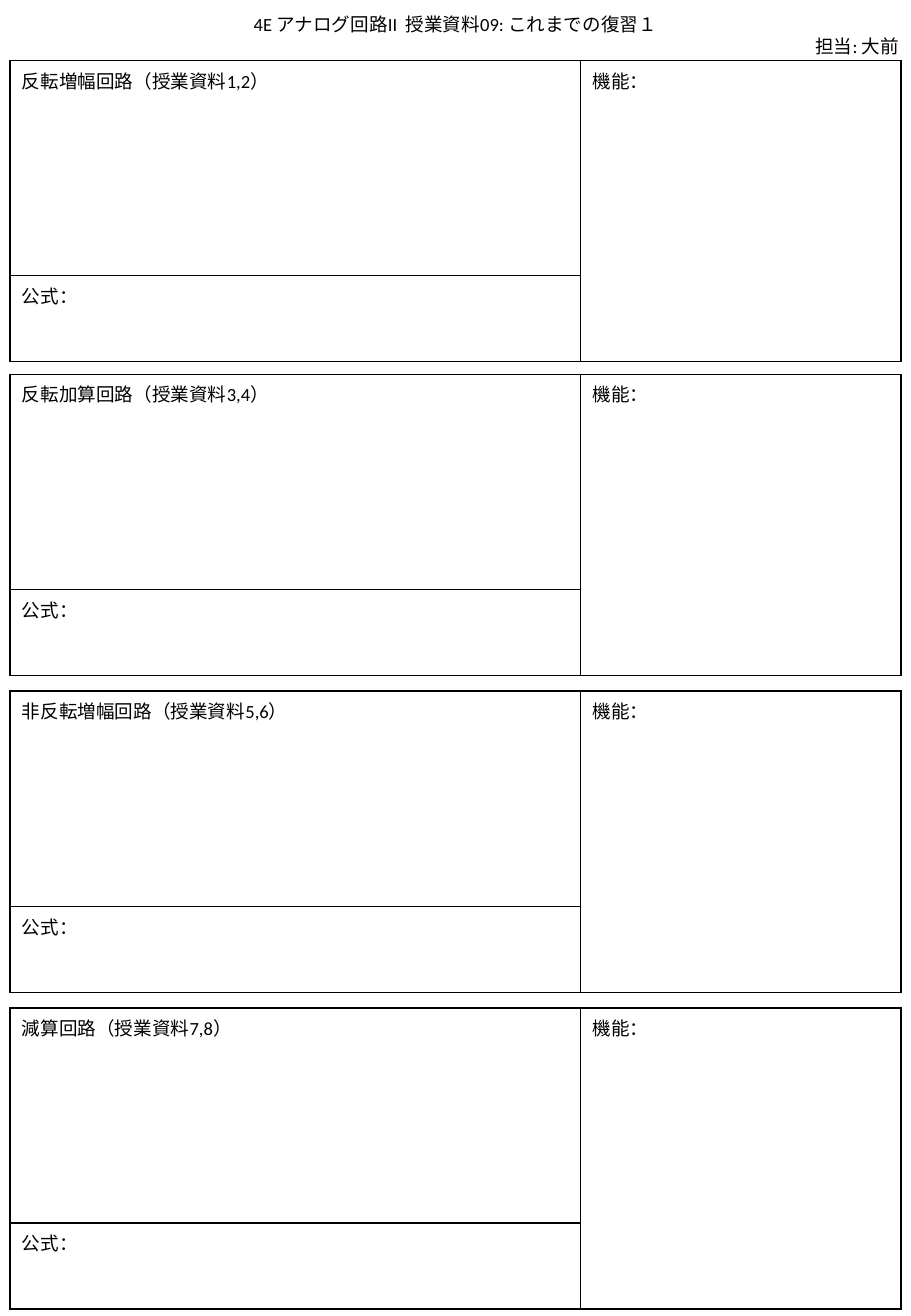
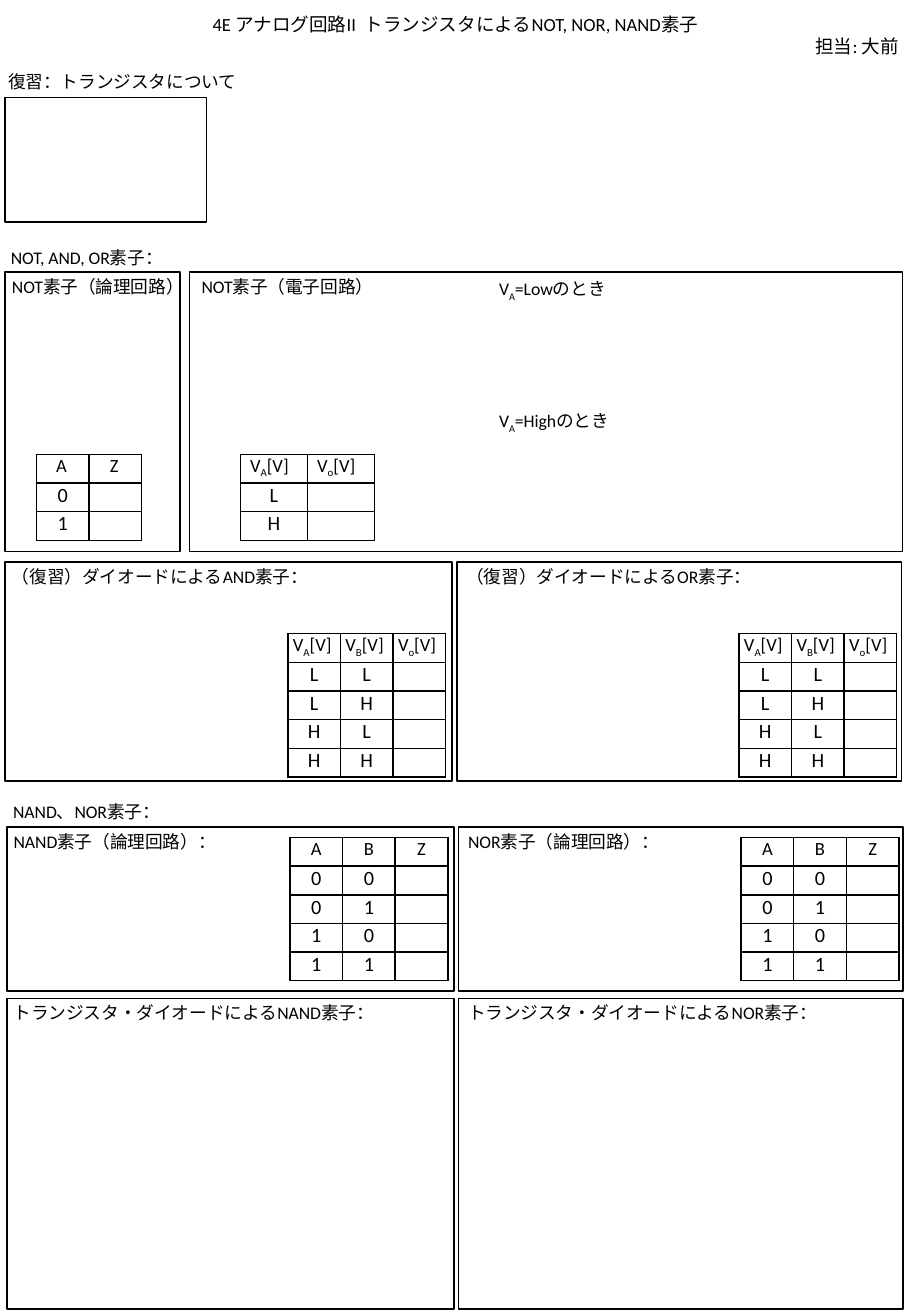
from itertools import product
from lxml.etree import SubElement
from pptx import Presentation
from pptx.dml.color import RGBColor
from pptx.enum.shapes import MSO_SHAPE
from pptx.enum.text import MSO_AUTO_SIZE, PP_ALIGN
from pptx.oxml.ns import qn
from pptx.util import Pt

HUES = {"ink": "000000", "paper": "FFFFFF"}
FONT = "Calibri"
LEFT, MID, RIGHT = PP_ALIGN.LEFT, PP_ALIGN.CENTER, PP_ALIGN.RIGHT
WIDTH, HEIGHT = 540, 780
ROW = 17


def hue(name):
    return RGBColor.from_string(HUES[name])


def write(para, text, size=10.5, align=LEFT, before=0):
    para.alignment = align
    para.space_before = Pt(before)
    if not text:
        para._p.get_or_add_endParaRPr().set("sz", str(int(size * 100)))
        return
    head, *rest = text.split("_")
    parts = [(head, False)]
    for part in rest:
        parts += [(part[0], True), (part[1:], False)]
    for words, low in parts:
        if words:
            run = para.add_run()
            run.text = words
            font = run.font
            font.name, font.size, font.bold = FONT, Pt(size), False
            font.color.rgb = hue("ink")
            if low:
                font._element.set("baseline", "-25000")


class Sheet:
    """Holds the deck, its style and the current slide."""

    def __init__(self):
        self.deck = Presentation()
        self.deck.slide_width, self.deck.slide_height = Pt(WIDTH), Pt(HEIGHT)
        self.slide = None

    def start(self, title):
        self.slide = self.deck.slides.add_slide(self.deck.slide_layouts[6])
        self.text(0, 4.2, WIDTH, (title, MID, 0), ("担当: 大前", RIGHT, 0), size=11)

    def text(self, x, y, w, *lines, size=10.5):
        box = self.slide.shapes.add_textbox(Pt(x), Pt(y), Pt(w), Pt(20 * len(lines)))
        frame = box.text_frame
        frame.word_wrap = True
        frame.auto_size = MSO_AUTO_SIZE.SHAPE_TO_FIT_TEXT
        for i, (line, align, before) in enumerate(lines):
            para = frame.add_paragraph() if i else frame.paragraphs[0]
            write(para, line, size=size, align=align, before=before)

    def label(self, x, y, w, line):
        self.text(x, y, w, (line, LEFT, 0))

    def box(self, x, y, w, h):
        shape = self.slide.shapes.add_shape(
            MSO_SHAPE.RECTANGLE, Pt(x), Pt(y), Pt(w), Pt(h))
        shape.shadow.inherit = False
        shape.fill.solid()
        shape.fill.fore_color.rgb = hue("paper")
        shape.line.color.rgb = hue("ink")
        shape.line.width = Pt(1)

    def panel(self, x, y, w, h, title, shift=-1.5):
        self.box(x, y, w, h)
        self.label(x + shift, y - 1.5, w, title)

    def grid(self, x, y, cols, rows):
        frame = self.slide.shapes.add_table(
            len(rows), len(cols), Pt(x), Pt(y), Pt(sum(cols)), Pt(sum(rows)))
        table = frame.table
        table.first_row = table.horz_banding = False
        for col, w in zip(table.columns, cols):
            col.width = Pt(w)
        for row, h in zip(table.rows, rows):
            row.height = Pt(h)
        for cell in table.iter_cells():
            self.edge(cell)
        return table

    def edge(self, cell):
        props = cell._tc.get_or_add_tcPr()
        for side in ("lnL", "lnR", "lnT", "lnB"):
            line = SubElement(props, qn("a:" + side), w=str(Pt(1)))
            fill = SubElement(line, qn("a:solidFill"))
            SubElement(fill, qn("a:srgbClr"), val=HUES["ink"])
        cell.fill.background()

    def form(self, y, title):
        table = self.grid(5.8, y, (338.4, 190), (127.5, 51))
        table.cell(0, 1).merge(table.cell(1, 1))
        for r, c, line in ((0, 0, title), (0, 1, "機能："), (1, 0, "公式：")):
            write(table.cell(r, c).text_frame.paragraphs[0], line, size=11)

    def truth(self, x, y, heads, marks, wide=31.2, pads=(3, 3), align=MID):
        rows = [heads] + [(*row, "") for row in product(marks, repeat=len(heads) - 1)]
        table = self.grid(x, y, [wide] * len(heads), [ROW] * len(rows))
        for r, row in enumerate(rows):
            for c, word in enumerate(row):
                cell = table.cell(r, c)
                cell.margin_top = cell.margin_bottom = 0
                left, right = (0, 0) if r else pads
                cell.margin_left, cell.margin_right = Pt(left), Pt(right)
                write(cell.text_frame.paragraphs[0], word,
                      size=12 if r else 11, align=MID if r else align)


def review(sheet):
    sheet.start("4E アナログ回路II  授業資料09: これまでの復習１")
    forms = (
        (35.8, "反転増幅回路（授業資料1,2）"),
        (221.8, "反転加算回路（授業資料3,4）"),
        (409.7, "非反転増幅回路（授業資料5,6）"),
        (597.5, "減算回路（授業資料7,8）"),
    )
    for y, title in forms:
        sheet.form(y, title)


def gates(sheet):
    sheet.start("4E アナログ回路II  トランジスタによるNOT, NOR, NAND素子")
    sheet.label(-2.2, 38.2, WIDTH, "復習：トランジスタについて")
    sheet.box(3, 57.8, 119.5, 73.8)
    sheet.label(-0.7, 142.6, 134, "NOT, AND, OR素子：")
    sheet.label(0.7, 471, 461, "NAND、NOR素子：")

    sheet.panel(112.4, 161.3, 422.6, 165.7, "NOT素子（電子回路）", shift=0)
    sheet.box(3, 161.3, 103.7, 165.7)
    sheet.label(0, 159.8, 134, "NOT素子（論理回路）")
    sheet.text(288.7, 161.3, 134, ("V_A=Lowのとき", LEFT, 0), ("V_A=Highのとき", LEFT, 64))
    pads = (5.8, 7.2)
    sheet.truth(21.6, 269.3, ("A", "Z"), "01", wide=31.2, pads=pads)
    sheet.truth(142.4, 269.3, ("V_A[V]", "V_o[V]"), "LH", wide=39.8, pads=pads, align=LEFT)

    volts, bits = ("V_A[V]", "V_B[V]", "V_o[V]"), ("A", "B", "Z")
    halves = (
        (3, 265, 170.6, -3, "AND", "NAND"),
        (270.9, 263.5, 438, -1.5, "OR", "NOR"),
    )
    for x, w, grid, shift, plain, neg in halves:
        sheet.panel(x, 333.2, w, 129.8, f"（復習）ダイオードによる{plain}素子：", shift=shift)
        sheet.truth(grid, 375.6, volts, "LH", align=LEFT)
        sheet.panel(x + 1, 490.4, w, 97, f"{neg}素子（論理回路）：", shift=shift)
        sheet.truth(grid + 1.3, 496.4, bits, "01")
        sheet.panel(x + 1, 591.8, w, 184.2, f"トランジスタ・ダイオードによる{neg}素子：", shift=shift)


def main():
    sheet = Sheet()
    review(sheet)
    gates(sheet)
    sheet.deck.save("out.pptx")


if __name__ == "__main__":
    main()
